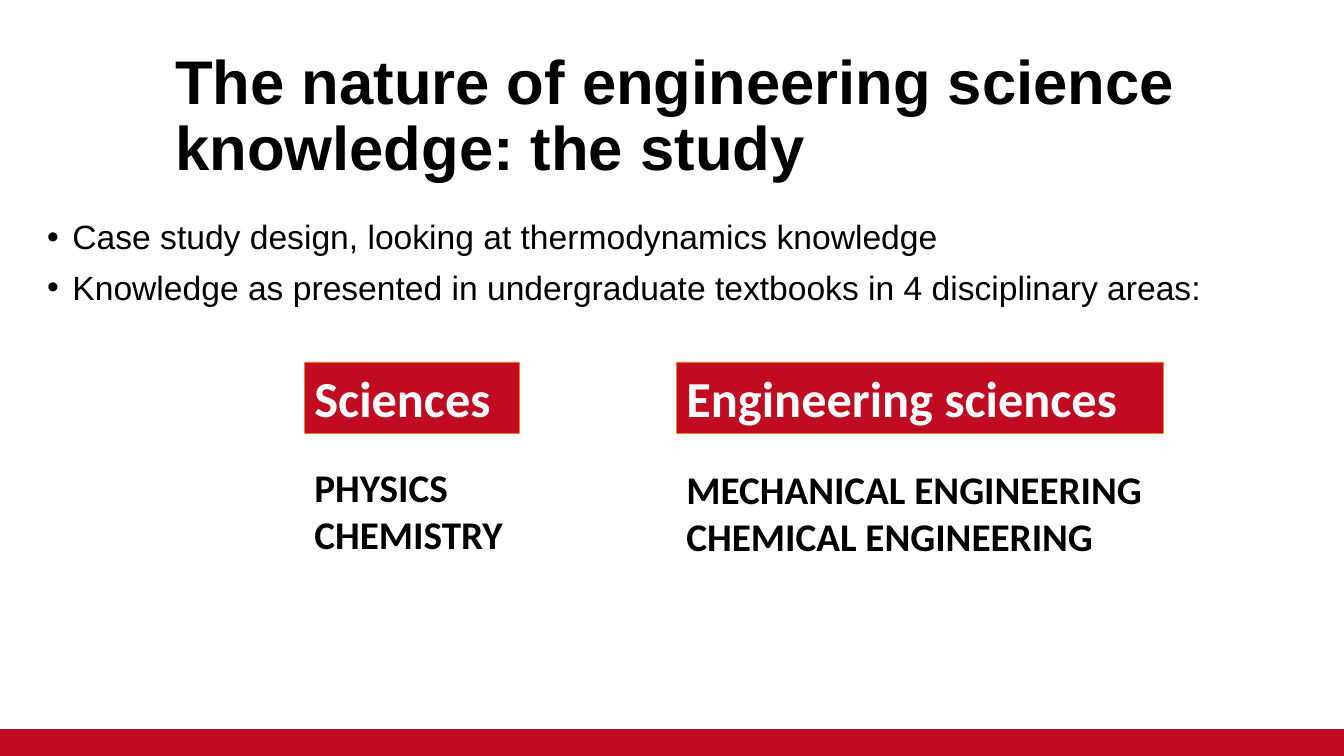
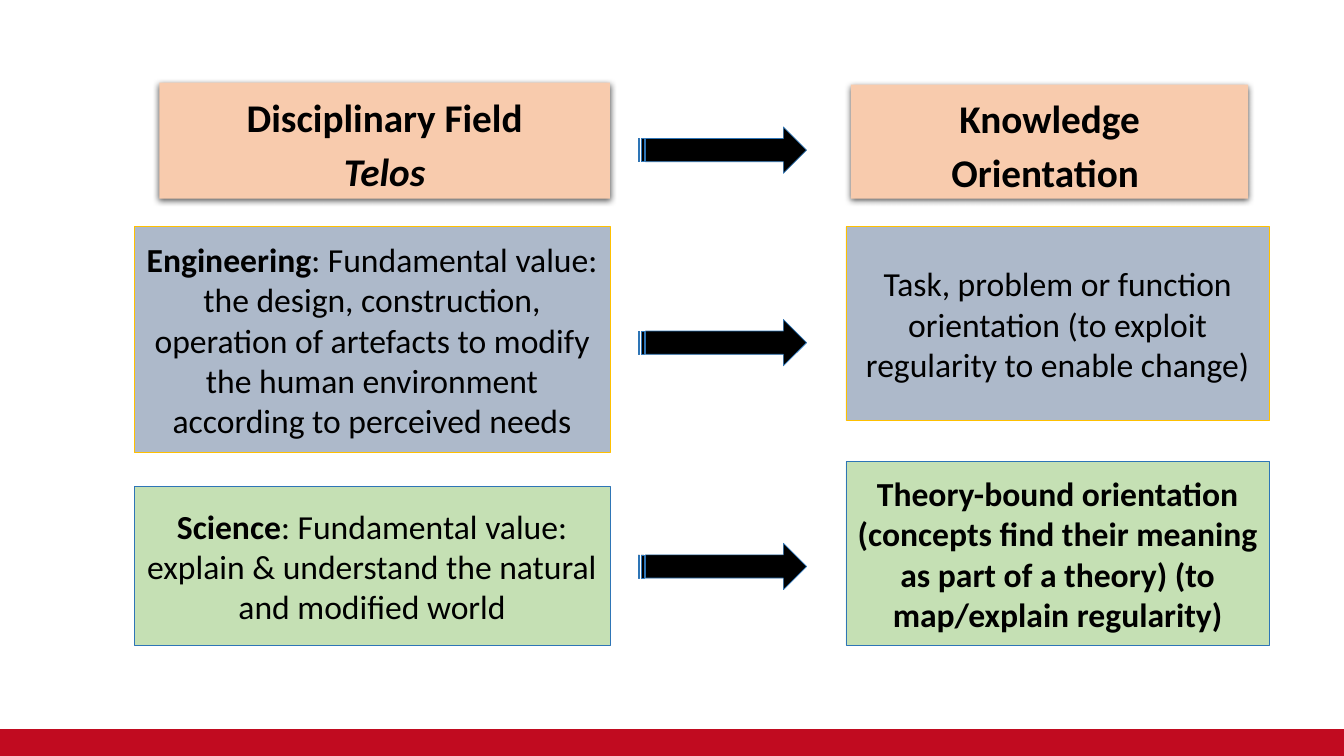
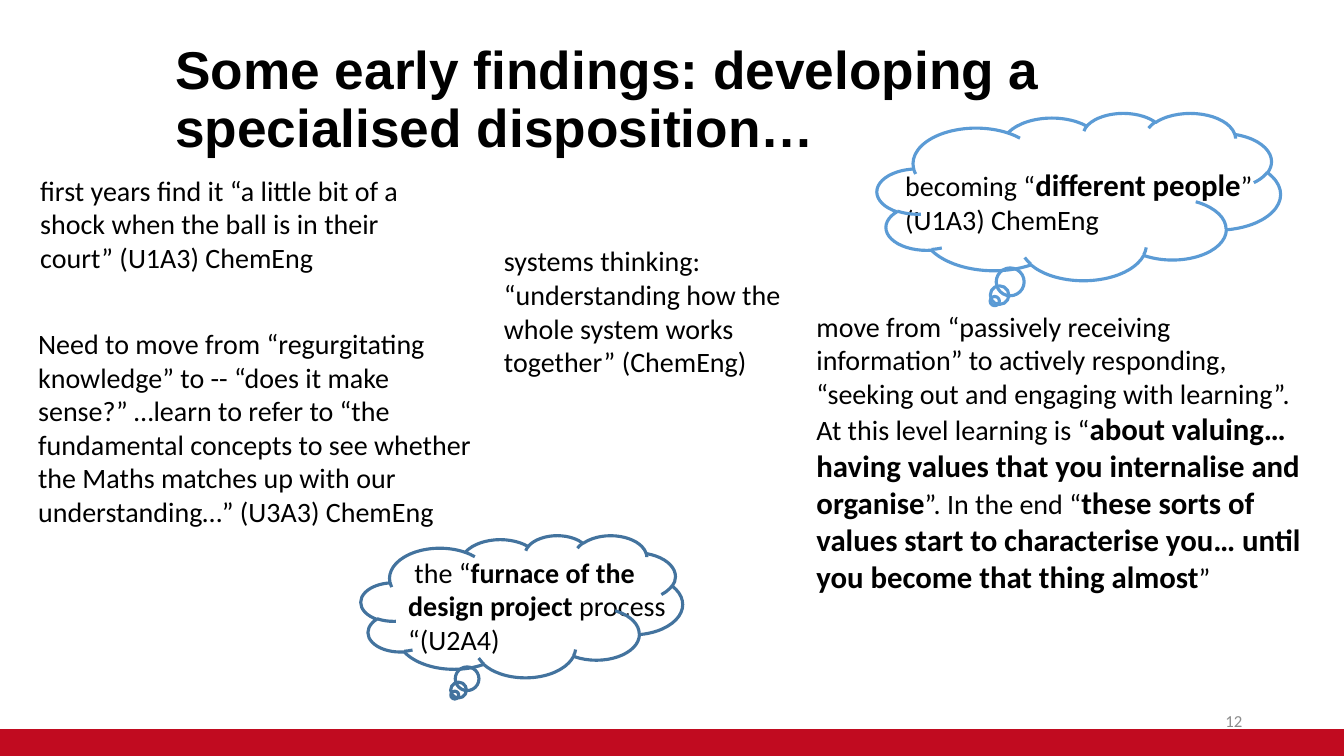
from lxml import etree
from pptx import Presentation, util as u
from pptx.dml.color import RGBColor
from pptx.enum import shapes, text
from pptx.oxml.ns import qn

PX = 9144  # 100 px to the inch
WIDTH, HEIGHT = 1333, 750
RED, BLACK, WHITE, GREY = "C10B20", "000000", "FFFFFF", "8C8C8C"
PEACH, SLATE, GREEN = "F8CBAD", "ADB9CA", "C5E0B4"
ORANGE, GOLD, BLUE = "ED7D31", "FFC000", "2E75B6"
BOLD = {"bold": True}
STRONG = {"bold": True, "size": 22}
MIDDLE, CENTER = text.MSO_ANCHOR.MIDDLE, text.PP_ALIGN.CENTER

# A paragraph is a string or a list of spans; a span is a string or (string, format).
STUDY_TITLE = "The nature of engineering science knowledge: the study"
STUDY_POINTS = [
    "Case study design, looking at thermodynamics knowledge",
    "Knowledge as presented in undergraduate textbooks in 4 disciplinary areas:",
]
# left, heading width, heading, list top, list width, list
STUDY_AREAS = [
    (302, 213, "Sciences", 455, 241, ["PHYSICS", "CHEMISTRY"]),
    (671, 483, "Engineering sciences", 457, 504,
     ["MECHANICAL ENGINEERING", "CHEMICAL ENGINEERING"]),
]

FIELD_HEADINGS = [
    ((158, 82, 447, 115), ["Disciplinary Field", [("Telos", {"italic": True})]]),
    ((844, 84, 394, 113), ["Knowledge", "Orientation "]),
]
FIELD_COLUMNS = [(133, 472), (839, 420)]
# fill, line, then (top, height, paragraph) for each column
FIELD_ROWS = [
    (SLATE, GOLD, [
        (225, 224, [("Engineering", BOLD),
                    ": Fundamental value: the design, construction, operation of artefacts "
                    "to modify the human environment according to perceived needs"]),
        (225, 192, "Task, problem or function orientation (to exploit regularity "
                   "to enable change)"),
    ]),
    (GREEN, BLUE, [
        (483, 157, [("Science", BOLD),
                    ": Fundamental value: explain & understand the natural and modified world"]),
        (458, 182, [("Theory-bound orientation (concepts find their meaning as part of "
                     "a theory) (to map/explain regularity)", BOLD)]),
    ]),
]
ARROW_TOPS = [126, 317, 539]

FINDINGS_TITLE = "Some early findings: developing a specialised disposition…"
FINDINGS = [
    ((30, 167, 381, 111),
     "first years find it “a little bit of a shock when the ball is in their court” "
     "(U1A3) ChemEng"),
    ((28, 319, 463, 212),
     "Need to move from “regurgitating knowledge” to -- “does it make sense?” "
     "…learn to refer to “the fundamental concepts to see whether the Maths matches up "
     "with our understanding…” (U3A3) ChemEng"),
    ((888, 159, 382, 81),
     ["becoming “", ("different people", STRONG), "” (U1A3) ChemEng"]),
    ((490, 237, 310, 145),
     "systems thinking: “understanding how the whole system works together” (ChemEng)"),
    ((395, 546, 282, 111),
     [" the “", ("furnace of the design project ", BOLD), "process “(U2A4)"]),
    ((800, 302, 516, 296),
     ["move from “passively receiving information” to actively responding, “seeking out "
      "and engaging with learning”. At this level learning is “",
      ("about valuing… having values that you internalise and organise", STRONG),
      "”. In the end “",
      ("these sorts of values start to characterise you… until you become that thing almost",
       STRONG),
      "”"]),
]
CLOUDS = [((358, 531, 319, 141), "43739E"), ((870, 112, 400, 166), "5B9BD5")]


def rgb(value):
    return RGBColor.from_string(value)


def px(*lengths):
    return [u.Emu(length * PX) for length in lengths]


def write(shape, paras, size=20, font="Calibri", color=BLACK, bold=False, italic=False,
          align=text.PP_ALIGN.LEFT, anchor=text.MSO_ANCHOR.TOP, spacing=1.0,
          before=0, bullet=None):
    frame = shape.text_frame
    frame.word_wrap = True
    frame.vertical_anchor = anchor
    for index, spans in enumerate(paras):
        para = frame.add_paragraph() if index else frame.paragraphs[0]
        para.alignment = align
        para.line_spacing = spacing
        if index and before:
            para.space_before = u.Pt(before)
        if bullet:
            props = para._p.get_or_add_pPr()
            props.set("marL", str(25 * PX))
            props.set("indent", str(-25 * PX))
            etree.SubElement(props, qn("a:buFont")).set("typeface", "Arial")
            etree.SubElement(props, qn("a:buChar")).set("char", bullet)
        for span in [spans] if isinstance(spans, str) else spans:
            words, style = (span, {}) if isinstance(span, str) else span
            run = para.add_run()
            run.text = words
            run.font.name = font
            run.font.size = u.Pt(style.get("size", size))
            run.font.bold = style.get("bold", bold)
            run.font.italic = style.get("italic", italic)
            run.font.color.rgb = rgb(color)


def add_text(page, at, paras, **style):
    box = page.shapes.add_textbox(*px(*at))
    write(box, paras, **style)


def add_shape(page, kind, at, fill=None, line=None, weight=0.5):
    shape = page.shapes.add_shape(kind, *px(*at))
    shape.shadow.inherit = False
    if fill:
        shape.fill.solid()
        shape.fill.fore_color.rgb = rgb(fill)
    else:
        shape.fill.background()
    if line:
        shape.line.color.rgb = rgb(line)
        shape.line.width = u.Pt(weight)
    else:
        shape.line.fill.background()
    return shape


def drop_shadow(shape):
    effects = shape._element.spPr.find(qn("a:effectLst"))
    shadow = etree.SubElement(effects, qn("a:outerShdw"), blurRad=str(u.Pt(4.5)),
                              dist=str(u.Pt(1.5)), dir="5400000", algn="ctr",
                              rotWithShape="0")
    color = etree.SubElement(shadow, qn("a:srgbClr"), val=BLACK)
    etree.SubElement(color, qn("a:alpha"), val="63000")


def add_page(deck):
    """Add a blank page with the red band along its foot."""
    page = deck.slides.add_slide(deck.slide_layouts[6])
    band = page.shapes.add_connector(shapes.MSO_CONNECTOR.STRAIGHT,
                                     *px(0, 737, WIDTH, 737))
    band.line.color.rgb = rgb(RED)
    band.line.width = u.Pt(19.25)
    etree.SubElement(band._element.spPr, qn("a:effectLst"))
    return page


def add_title(page, title, top, height, size):
    add_text(page, (164, top, 1077, height), [title], size=size, font="Arial",
             bold=True, anchor=MIDDLE, spacing=0.9)


def build_study(deck):
    page = add_page(deck)
    add_title(page, STUDY_TITLE, 44, 145, 44)
    add_text(page, (37, 214, 1249, 121), STUDY_POINTS, size=24, font="Arial",
             spacing=0.9, before=10, bullet="•")
    for left, width, heading, list_top, list_width, subjects in STUDY_AREAS:
        add_text(page, (left, list_top, list_width, 104), subjects, size=28, bold=True)
        label = add_shape(page, shapes.MSO_SHAPE.RECTANGLE, (left, 359, width, 71),
                          RED, ORANGE)
        write(label, [heading], size=36, color=WHITE, bold=True)


def build_fields(deck):
    page = add_page(deck)
    for at, paras in FIELD_HEADINGS:
        heading = add_shape(page, shapes.MSO_SHAPE.RECTANGLE, at, PEACH)
        drop_shadow(heading)
        write(heading, paras, size=28, bold=True, align=CENTER, anchor=MIDDLE, spacing=1.15)
    for fill, line, cells in FIELD_ROWS:
        for (left, width), (top, height, para) in zip(FIELD_COLUMNS, cells):
            cell = add_shape(page, shapes.MSO_SHAPE.RECTANGLE, (left, top, width, height),
                             fill, line)
            write(cell, [para], size=24, align=CENTER, anchor=MIDDLE)
    for top in ARROW_TOPS:
        add_shape(page, shapes.MSO_SHAPE.STRIPED_RIGHT_ARROW, (633, top, 167, 46),
                  BLACK, BLUE)


def build_findings(deck):
    page = add_page(deck)
    add_title(page, FINDINGS_TITLE, 40, 121, 38)
    add_text(page, (942, 695, 300, 40), ["12"], size=12, color=GREY,
             align=text.PP_ALIGN.RIGHT, anchor=MIDDLE)
    for at, para in FINDINGS:
        add_text(page, at, [para])
    for at, line in CLOUDS:
        add_shape(page, shapes.MSO_SHAPE.CLOUD_CALLOUT, at, line=line, weight=2.25)


def main():
    deck = Presentation()
    deck.slide_width, deck.slide_height = px(WIDTH, HEIGHT)
    build_study(deck)
    build_fields(deck)
    build_findings(deck)
    deck.save("out.pptx")


if __name__ == "__main__":
    main()
